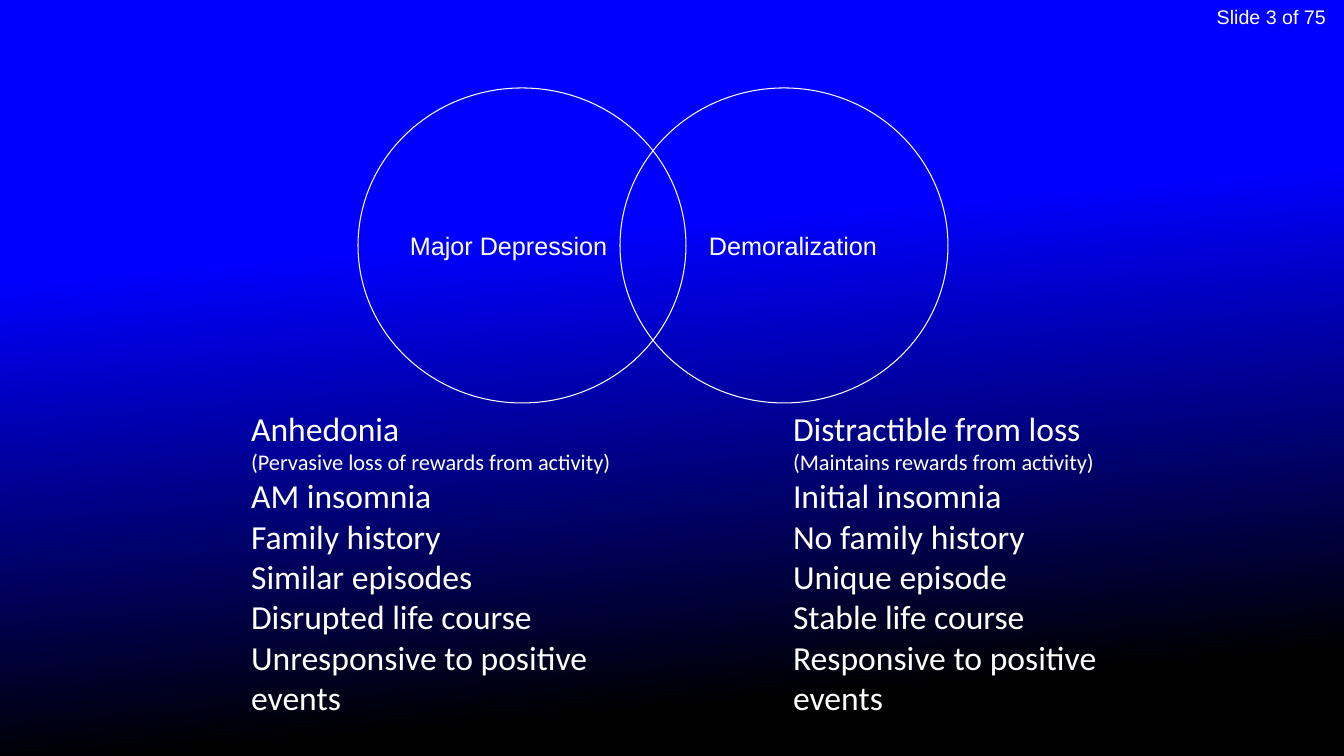
from pptx import Presentation
from pptx.dml.color import RGBColor
from pptx.enum.shapes import MSO_SHAPE
from pptx.enum.text import MSO_ANCHOR, MSO_AUTO_SIZE, PP_ALIGN
from pptx.util import Inches, Pt

SLIDE_W, SLIDE_H = 1344, 756
SCALE = Inches(7.5) / SLIDE_H
COLORS = {"top": "0000FF", "bottom": "000000", "ink": "FFFFFF"}
FRAME = {"word_wrap": True, "auto_size": MSO_AUTO_SIZE.NONE, "vertical_anchor": MSO_ANCHOR.TOP}
TIGHT = {"space_before": Pt(0), "space_after": Pt(0), "line_spacing": 1.0}

DEPRESSION = [
    "Anhedonia",
    "(Pervasive loss of rewards from activity)",
    "AM insomnia",
    "Family history",
    "Similar episodes",
    "Disrupted life course",
    "Unresponsive to positive",
    "events",
]
DEMORALIZATION = [
    "Distractible from loss",
    "(Maintains rewards from activity)",
    "Initial insomnia",
    "No family history",
    "Unique episode",
    "Stable life course",
    "Responsive to positive",
    "events",
]


def px(length):
    return round(length * SCALE)


def color(name):
    return RGBColor.from_string(COLORS[name])


def apply(target, values):
    for name, value in values.items():
        setattr(target, name, value)


def write(paragraph, words, size, face, align=PP_ALIGN.LEFT):
    apply(paragraph, {**TIGHT, "alignment": align})
    run = paragraph.add_run()
    run.text = words
    apply(run.font, {"size": Pt(size), "name": face})
    run.font.color.rgb = color("ink")


def paint_background(slide):
    fill = slide.background.fill
    fill.gradient()
    fill.gradient_angle = 360 - 85
    for stop, name, position in zip(fill.gradient_stops, ("top", "bottom"), (0.32, 0.88)):
        stop.color.rgb = color(name)
        stop.position = position


def add_label(slide, box, words, size, align=PP_ALIGN.LEFT):
    label = slide.shapes.add_textbox(*map(px, box))
    apply(label.text_frame, FRAME)
    write(label.text_frame.paragraphs[0], words, size, "Arial", align)


def add_venn(slide, left, top, width, height):
    diameter, step = 328, width - 328
    labels = [("Major Depression", 42, 220), ("Demoralization", 341, 191)]
    for index, (condition, inset, label_width) in enumerate(labels):
        add_label(slide, (left + inset, top + 137, label_width, 40), condition, 18)
        circle = slide.shapes.add_shape(
            MSO_SHAPE.OVAL, *map(px, (left + index * step, top, diameter, height)))
        circle.shadow.inherit = False
        circle.fill.background()
        circle.line.color.rgb = color("ink")
        circle.line.width = Pt(0.75)


def fill_traits(body, box, traits):
    apply(body, dict(zip(("left", "top", "width", "height"), map(px, box))))
    apply(body.text_frame, FRAME)
    for index, trait in enumerate(traits):
        paragraph = body.text_frame.paragraphs[0] if index == 0 else body.text_frame.add_paragraph()
        write(paragraph, trait, 16 if trait.startswith("(") else 24, "Calibri")
        properties = paragraph._p.get_or_add_pPr()
        for name in ("marL", "indent"):
            properties.set(name, "0")
        bullet = properties.makeelement(
            "{http://schemas.openxmlformats.org/drawingml/2006/main}buNone", {})
        properties.append(bullet)


def build_comparison(deck):
    slide = deck.slides.add_slide(deck.slide_layouts[3])
    title, depression, demoralization = slide.placeholders
    title.element.getparent().remove(title.element)
    paint_background(slide)
    add_label(slide, (1112, 0, 224, 34), "Slide 3 of 75", 14, PP_ALIGN.RIGHT)
    add_venn(slide, 358, 88, 590, 315)
    fill_traits(depression, (241, 403, 386, 323), DEPRESSION)
    fill_traits(demoralization, (783, 403, 335, 323), DEMORALIZATION)


def main():
    deck = Presentation()
    apply(deck, {"slide_width": px(SLIDE_W), "slide_height": px(SLIDE_H)})
    build_comparison(deck)
    deck.save("out.pptx")


if __name__ == "__main__":
    main()
